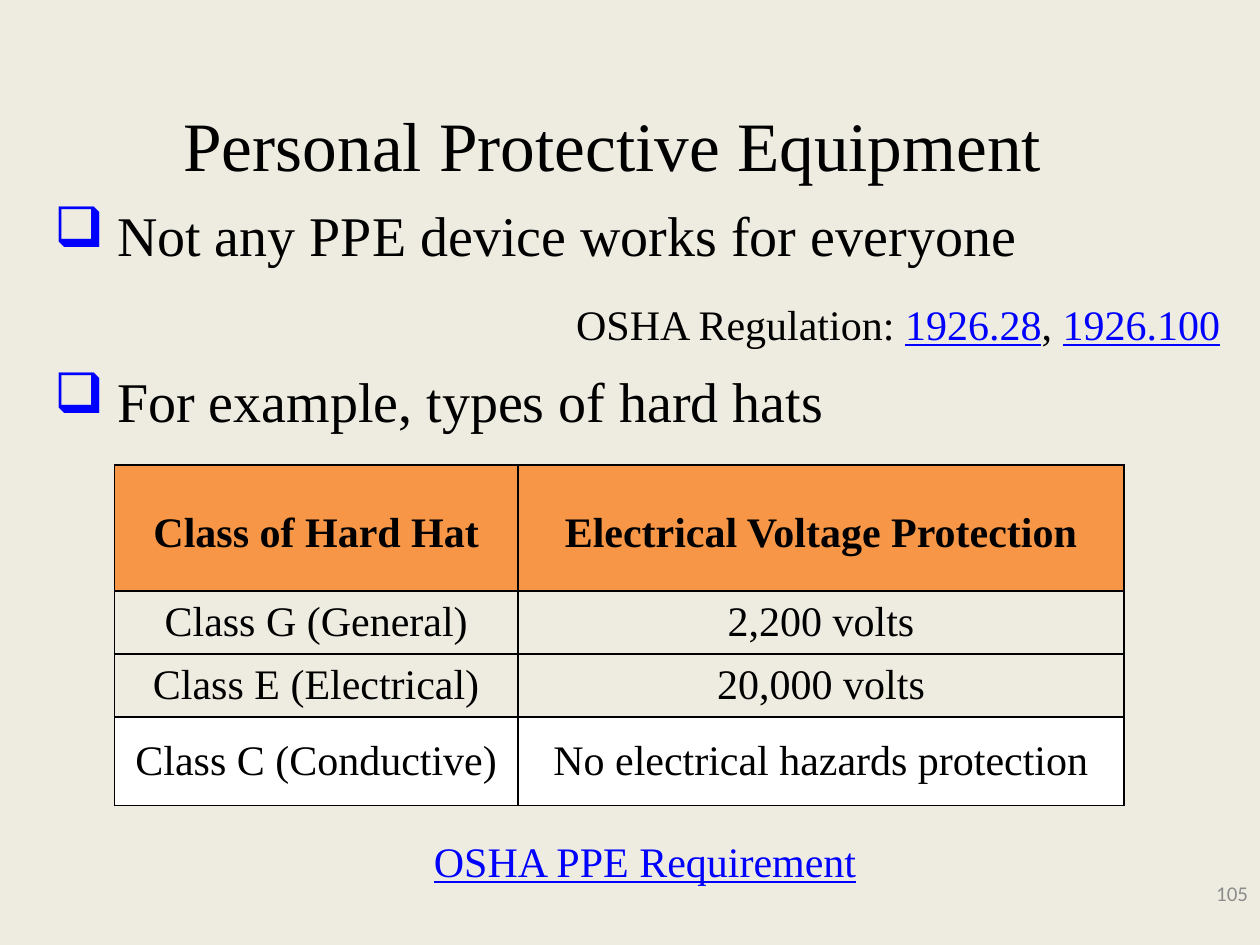
from lxml.etree import SubElement
from pptx import Presentation
from pptx.dml.color import RGBColor
from pptx.enum.text import MSO_ANCHOR as Anchor, PP_ALIGN as Align
from pptx.oxml import parse_xml
from pptx.oxml.ns import nsdecls, qn
from pptx.util import Cm, Pt

BLACK = RGBColor(0x00, 0x00, 0x00)
BLUE = RGBColor(0x00, 0x00, 0xFF)
GRAY = RGBColor(0x8C, 0x8C, 0x8C)
WHITE = RGBColor(0xFF, 0xFF, 0xFF)
ORANGE = RGBColor(0xF7, 0x96, 0x46)
CREAM = RGBColor(0xEE, 0xEC, 0xE1)


def add_span(para, text, size=24, font="Times New Roman", color=BLACK,
             bold=False, link=False):
    span = para.add_run()
    span.text = text
    span.font.size = Pt(size)
    span.font.name = font
    span.font.bold = bold
    span.font.underline = link
    span.font.color.rgb = BLUE if link else color


def add_box(page, left, top, width, height, align=Align.CENTER, anchor=Anchor.TOP):
    box = page.shapes.add_textbox(Cm(left), Cm(top), Cm(width), Cm(height))
    box.text_frame.word_wrap = True
    box.text_frame.vertical_anchor = anchor
    para = box.text_frame.paragraphs[0]
    para.alignment = align
    return para


deck = Presentation()
deck.slide_width, deck.slide_height = Cm(25.4), Cm(19.05)
page = deck.slides.add_slide(deck.slide_layouts[6])
page.background.fill.solid()
page.background.fill.fore_color.rgb = CREAM

# Title and page number
para = add_box(page, 0.28, 2.11, 24.49, 1.57, anchor=Anchor.MIDDLE)
add_span(para, "Personal Protective Equipment ", size=39.6)
para = add_box(page, 19.69, 17.5, 5.72, 1.02, align=Align.RIGHT, anchor=Anchor.MIDDLE)
add_span(para, "105", size=12, font="Calibri", color=GRAY)

# Bulleted statements
for top, text in ((3.91, "Not any PPE device works for everyone"),
                  (7.26, "For example, types of hard hats")):
    para = add_box(page, 0.84, top, 20.73, 1.63, align=Align.LEFT)
    add_span(para, text, size=32)
    props = para._p.get_or_add_pPr()
    props.set("marL", str(Cm(1.27)))
    props.set("indent", str(-Cm(1.27)))
    bullet_color = SubElement(props, qn("a:buClr"))
    SubElement(bullet_color, qn("a:srgbClr"), val=str(BLUE))
    SubElement(props, qn("a:buChar"), char="❑")

# Regulation references
para = add_box(page, 11.02, 5.89, 14.17, 1.27)
for text, link in (("OSHA Regulation: ", False), ("1926.28", True),
                   (", ", False), ("1926.100", True)):
    add_span(para, text, link=link)
para = add_box(page, 5.92, 16.71, 14.17, 1.27)
add_span(para, "OSHA PPE Requirement", link=True)

# Hard hat table: row height, fill, texts
ROWS = (
    (2.54, ORANGE, ("Class of Hard Hat", "Electrical Voltage Protection")),
    (1.27, None, ("Class G (General)", "2,200 volts")),
    (1.27, None, ("Class E (Electrical)", "20,000 volts")),
    (1.78, WHITE, ("Class C (Conductive)", "No electrical hazards protection")),
)
frame = page.shapes.add_table(len(ROWS), 2, Cm(2.31), Cm(9.37), Cm(20.35), Cm(6.86))
table = frame.table
table.first_row = table.horz_banding = False
for column, width in zip(table.columns, (8.13, 12.22)):
    column.width = Cm(width)

for row_index, (height, fill, texts) in enumerate(ROWS):
    table.rows[row_index].height = Cm(height)
    header = row_index == 0
    for column_index, text in enumerate(texts):
        cell = table.cell(row_index, column_index)
        cell.vertical_anchor = Anchor.MIDDLE
        cell.margin_top = Cm(0.48 if header else 0.13)
        para = cell.text_frame.paragraphs[0]
        para.alignment = Align.CENTER
        if header:
            para.line_spacing = 0.76
        add_span(para, text, bold=header)
        if fill is None:
            cell.fill.background()
        else:
            cell.fill.solid()
            cell.fill.fore_color.rgb = fill
        # Borders come before the fill in the cell properties
        for position, side in enumerate("LRTB"):
            border = parse_xml(
                f'<a:ln{side} {nsdecls("a")} w="{Pt(1)}"><a:solidFill>'
                f'<a:srgbClr val="{BLACK}"/></a:solidFill></a:ln{side}>')
            cell._tc.get_or_add_tcPr().insert(position, border)

deck.save("out.pptx")
